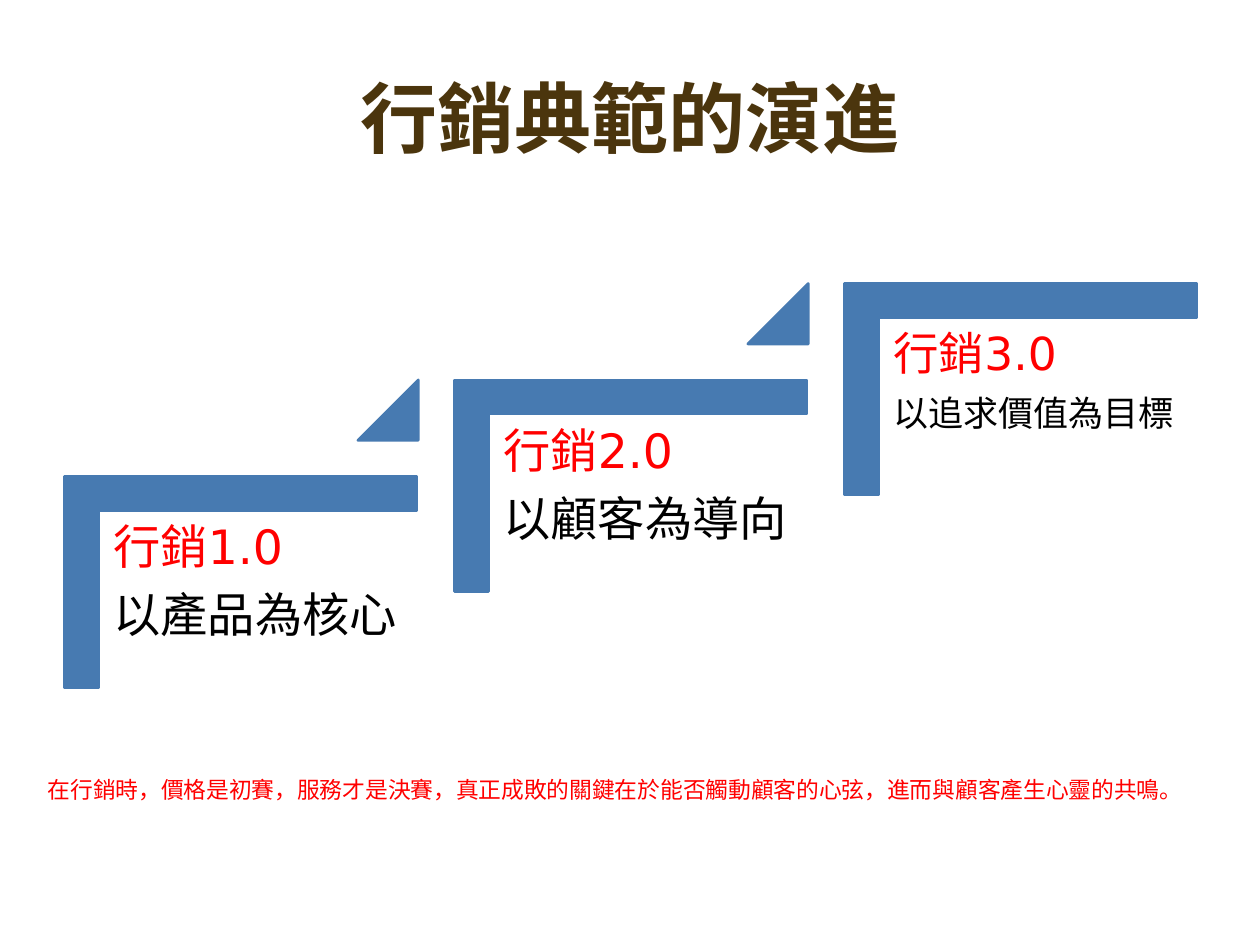
from pptx import Presentation
from pptx.dml.color import RGBColor
from pptx.enum.shapes import MSO_SHAPE
from pptx.enum.text import MSO_ANCHOR, PP_ALIGN
from pptx.util import Inches, Pt

CORNER, TRIANGLE = MSO_SHAPE.CORNER, MSO_SHAPE.ISOSCELES_TRIANGLE
MIDDLE, CENTER, LEFT = MSO_ANCHOR.MIDDLE, PP_ALIGN.CENTER, PP_ALIGN.LEFT
COLORS = {"title": "4B350D", "stair": "477AB1", "accent": "FF0000", "body": "000000"}
FONT = "DejaVu Sans"
WIDTH, HEIGHT = 10, 7.5
STEP_WIDTH, STEP_HEIGHT = 0.28 * WIDTH, 0.224 * HEIGHT
PITCH, RISE = 3.095, 0.765
STEPS = [
    ("行銷1.0", 27, "以產品為核心", 27),
    ("行銷2.0", 27, "以顧客為導向", 27),
    ("行銷3.0", 26, "以追求價值為目標", 20),
]


def write(paragraph, text, *, size, color, bold=False, align=LEFT, spacing=None, after=None):
    """Put one formatted run of text into a paragraph."""
    paragraph.alignment = align
    paragraph.line_spacing = spacing
    paragraph.space_after = after
    run = paragraph.add_run()
    run.text = text
    run.font.name = FONT
    run.font.size = Pt(size)
    run.font.bold = bold
    run.font.color.rgb = RGBColor.from_string(COLORS[color])


def add_stair_part(shapes, preset, left, top, width, height, adjustments, rotation=0):
    """Add one solid part of the staircase."""
    part = shapes.add_shape(preset, Inches(left), Inches(top), Inches(width), Inches(height))
    for index, value in enumerate(adjustments):
        part.adjustments[index] = value
    part.rotation = rotation
    part.shadow.inherit = False
    stair_color = RGBColor.from_string(COLORS["stair"])
    part.fill.solid()
    part.fill.fore_color.rgb = stair_color
    part.line.color.rgb = stair_color
    part.line.width = Pt(1.5)


def add_title(slide, left, top, width, height):
    """Place and format the slide title."""
    title = slide.shapes.title
    title.left, title.top = Inches(left), Inches(top)
    title.width, title.height = Inches(width), Inches(height)
    title.text_frame.vertical_anchor = MIDDLE
    write(title.text_frame.paragraphs[0], "行銷典範的演進",
          size=44, color="title", bold=True, align=CENTER)


def add_step(shapes, left, top, width, height, step, has_next):
    """Draw one stair with its heading, focus and rising marker."""
    heading, heading_size, focus, focus_size = step
    inset = (width - height) / 2
    add_stair_part(shapes, CORNER, left + inset, top - inset, height, width,
                   (0.161, 0.161), rotation=90)
    label = shapes.add_textbox(Inches(left + 0.1 * width), Inches(top + 0.16 * height),
                               Inches(0.904 * width), Inches(1.32 * height))
    frame = label.text_frame
    frame.word_wrap = True
    frame.margin_left = frame.margin_right = Inches(0.11)
    frame.margin_top = frame.margin_bottom = Inches(0.11)
    write(frame.paragraphs[0], heading, size=heading_size, color="accent",
          spacing=0.9, after=Pt(0.35 * heading_size))
    write(frame.add_paragraph(), focus, size=focus_size, color="body",
          spacing=0.9, after=Pt(0.35 * focus_size))
    if has_next:
        marker = 0.48
        add_stair_part(shapes, TRIANGLE, left + width - marker + 0.01, top - RISE,
                       marker, marker, (1,))


def add_staircase(slide, left, top):
    """Lay out the steps, each one pitch right and one rise up."""
    shapes = slide.shapes.add_group_shape().shapes
    for index, step in enumerate(STEPS):
        add_step(shapes, left + index * PITCH, top - index * RISE,
                 STEP_WIDTH, STEP_HEIGHT, step, index < len(STEPS) - 1)


def add_conclusion(slide, left, top, width, height):
    """Add the closing sentence below the staircase."""
    conclusion = slide.shapes.add_textbox(Inches(left), Inches(top),
                                          Inches(width), Inches(height))
    conclusion.text_frame.word_wrap = True
    write(conclusion.text_frame.paragraphs[0],
          "在行銷時，價格是初賽，服務才是決賽，真正成敗的關鍵在於能否觸動顧客的心弦，"
          "進而與顧客產生心靈的共鳴。", size=13, color="accent")


def main():
    """Build and save the slide."""
    deck = Presentation()
    deck.slide_width, deck.slide_height = Inches(WIDTH), Inches(HEIGHT)
    slide = deck.slides.add_slide(deck.slide_layouts[5])
    add_title(slide, 0.05 * WIDTH, 0.04 * HEIGHT, 0.9 * WIDTH, HEIGHT / 6)
    add_staircase(slide, 0.51, 3.78)
    add_conclusion(slide, 0.28, 6.11, 9.29, 0.32)
    deck.save("out.pptx")


if __name__ == "__main__":
    main()
